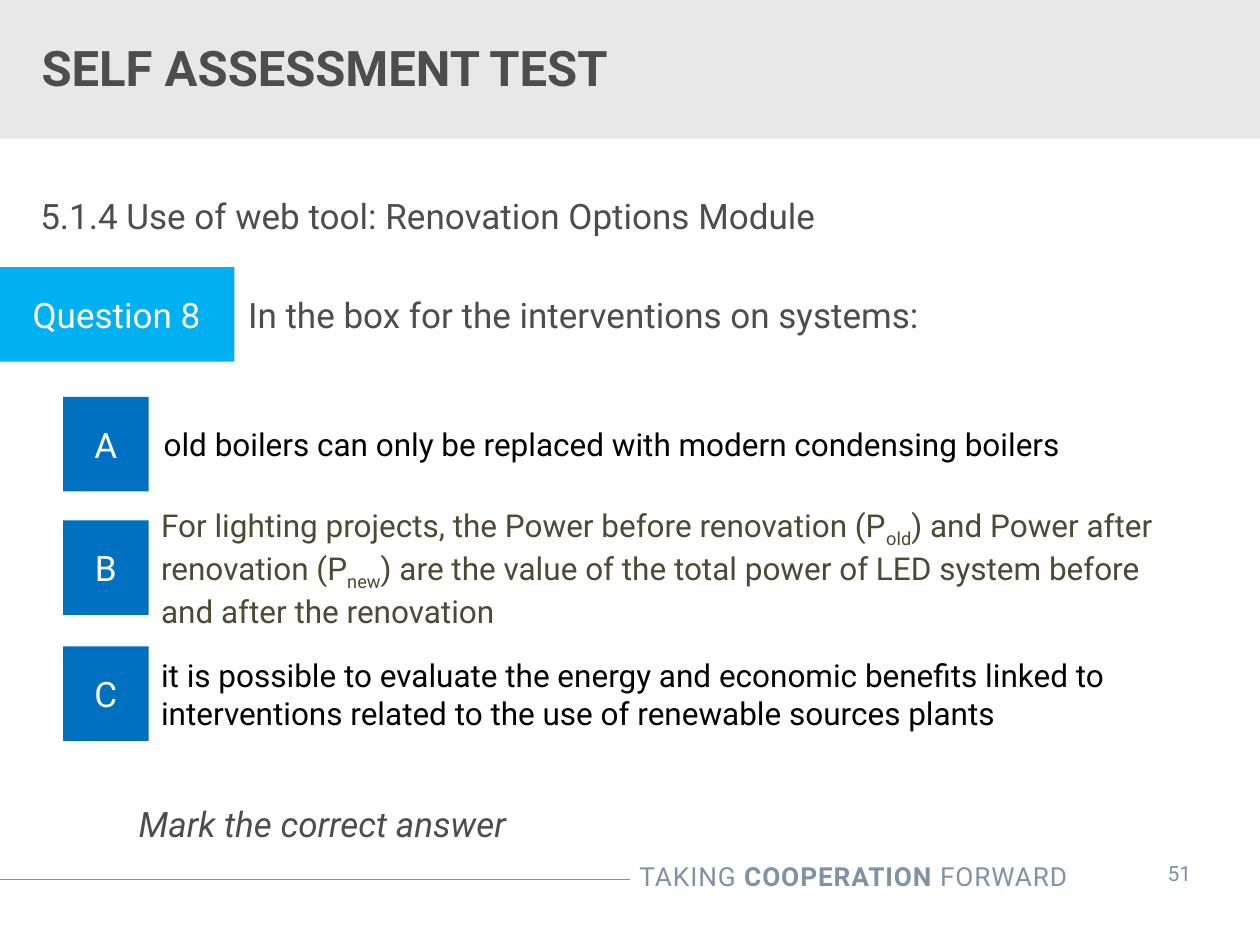
from pptx import Presentation
from pptx.dml.color import RGBColor
from pptx.enum.shapes import MSO_CONNECTOR, MSO_SHAPE
from pptx.enum.text import MSO_ANCHOR, PP_ALIGN
from pptx.oxml.ns import qn
from pptx.util import Inches, Pt

RECT = MSO_SHAPE.RECTANGLE
LINE = MSO_CONNECTOR.STRAIGHT
TOP, MIDDLE = MSO_ANCHOR.TOP, MSO_ANCHOR.MIDDLE
LEFT, CENTER, RIGHT = PP_ALIGN.LEFT, PP_ALIGN.CENTER, PP_ALIGN.RIGHT

FONT = "Roboto"
COLORS = {
    "band": "E8E8E8", "text": "4D4D4E", "foot": "7E93A5", "black": "000000",
    "olive": "4D4933", "white": "FFFFFF", "cyan": "00B0F0", "blue": "0070C0",
}
PLAIN = {"margin_left": 0, "margin_right": 0, "margin_top": 0, "margin_bottom": 0}
HIGH = 0.75  # height of question and answer rows

# Letter, row top, text left, text colour, runs
ANSWERS = [
    ("A", 3.15, 1.2, "black",
     ["old boilers can only be replaced with modern condensing boilers"]),
    ("B", 4.13, 1.18, "olive",
     ["For lighting projects, the Power before renovation (P", ("old", "sub"),
      ") and Power after renovation (P", ("new", "sub"),
      ") are the value of the total power of LED system before and after"
      " the renovation"]),
    ("C", 5.13, 1.18, "black",
     ["it is possible to evaluate the energy and economic benefits linked to"
      " interventions related to the use of renewable sources plants"]),
]


def rgb(name):
    return RGBColor.from_string(COLORS[name])


def place(*box):
    return [Inches(v) for v in box]


def write(shape, runs, size, color, align=LEFT, anchor=MIDDLE, space=None, **frame):
    """Fill a shape with one paragraph; a run is text or (text, style)."""
    body = shape.text_frame
    values = {"word_wrap": True, "vertical_anchor": anchor, **frame}
    for key, value in values.items():
        setattr(body, key, value)
    para = body.paragraphs[0]
    para.alignment = align
    for item in runs:
        text, style = (item, "") if isinstance(item, str) else item
        run = para.add_run()
        run.text = text
        looks = {"name": FONT, "size": Pt(size), "bold": style == "bold",
                 "italic": style == "italic"}
        for key, value in looks.items():
            setattr(run.font, key, value)
        run.font.color.rgb = rgb(color)
        props = run._r.get_or_add_rPr()
        if style == "sub":
            props.set("baseline", "-25000")
        if space:
            props.set("spc", str(space))


def add_text(slide, box, runs, size, color, **options):
    write(slide.shapes.add_textbox(*place(*box)), runs, size, color, **options)


def add_block(slide, box, fill, label=None):
    block = slide.shapes.add_shape(RECT, *place(*box))
    block.shadow.inherit = False
    block.fill.solid()
    block.fill.fore_color.rgb = rgb(fill)
    block.line.fill.background()
    if label:
        write(block, [label], 20, "white", align=CENTER)


def add_rule(slide):
    rule = slide.shapes.add_connector(LINE, *place(-0.01, 6.98, 5, 6.98))
    rule.line.color.rgb = rgb("foot")
    rule.line.width = Pt(0.75)
    props = rule._element.spPr
    props.append(props.makeelement(qn("a:effectLst"), {}))


def add_title(slide, text):
    title = slide.shapes.title
    title.left, title.top, title.width, title.height = place(-0.01, 0.16, 7.21, 0.75)
    write(title, [(text, "bold")], 28, "text", margin_left=Inches(0.34))
    # Bring the title in front of the band
    slide.shapes._spTree.append(title._element)


def add_answer(slide, letter, top, left, color, runs):
    add_block(slide, (0.5, top, 0.68, HIGH), "blue", letter)
    add_text(slide, (left, top, 8.15, HIGH), runs, 18, color)


def main():
    deck = Presentation()
    deck.slide_width, deck.slide_height = place(10, 7.5)
    slide = deck.slides.add_slide(deck.slide_layouts[5])

    # Header band and footer
    add_rule(slide)
    add_block(slide, (0, 0, 10, 1.1), "band")
    add_text(slide, (3.88, 6.78, 4.69, 0.35),
             ["TAKING ", ("COOPERATION", "bold"), " FORWARD"], 15, "foot",
             align=RIGHT, anchor=TOP, space=50)
    add_text(slide, (8.99, 6.73, 0.74, 0.4), ["51"], 12, "foot", align=CENTER,
             anchor=TOP, word_wrap=False, margin_top=Inches(0.1))
    add_title(slide, "SELF ASSESSMENT TEST")

    # Topic and question
    add_text(slide, (0.32, 1.54, 9.36, 0.34),
             ["5.1.4 Use of web tool: Renovation Options Module"], 20, "text",
             anchor=TOP, **PLAIN)
    add_block(slide, (-0.01, 2.12, 1.87, HIGH), "cyan", "Question 8")
    add_text(slide, (1.87, 2.12, 8.15, HIGH),
             ["In the box for the interventions on systems:"], 20, "text")

    # Answers
    for answer in ANSWERS:
        add_answer(slide, *answer)
    add_text(slide, (1.1, 6.37, 8.58, 0.34),
             [("Mark the correct answer", "italic")], 20, "text",
             anchor=TOP, **PLAIN)

    deck.save("out.pptx")


if __name__ == "__main__":
    main()
